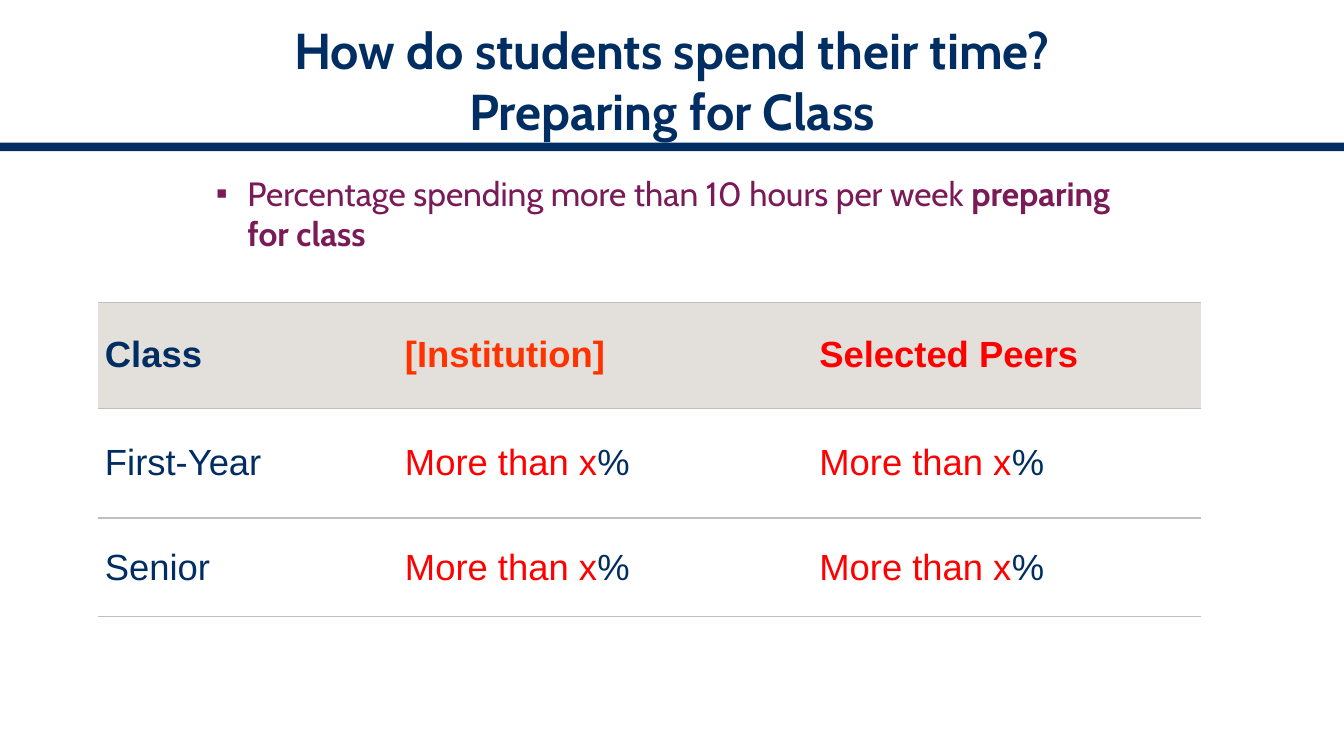
from dataclasses import dataclass

from lxml.etree import SubElement
from pptx import Presentation
from pptx.dml.color import RGBColor as Rgb
from pptx.enum.shapes import MSO_SHAPE as Shape
from pptx.enum.text import MSO_ANCHOR as Anchor, MSO_AUTO_SIZE as AutoSize, PP_ALIGN as Align
from pptx.oxml import parse_xml
from pptx.oxml.ns import nsdecls, qn
from pptx.util import Pt


@dataclass(frozen=True)
class Theme:
    navy: str = "002D62"
    plum: str = "7A1A57"
    orange: str = "FF3300"
    red: str = "FF0000"
    header_fill: str = "E3DFDA"
    rule: str = "BFBFBF"
    heading_font: str = "Cabin"
    table_font: str = "Arial"
    title_size: int = 36
    body_size: int = 24
    table_size: int = 26


THEME = Theme()
NO_TABLE_STYLE = "{2D5ABB26-0587-4C30-8999-92F81FD0307C}"


class SlideBuilder:
    def __init__(self, page, theme):
        self.page = page
        self.theme = theme

    def style(self, span, font, size, color, bold=False):
        span.font.name = font
        span.font.size = Pt(size)
        span.font.bold = bold
        span.font.color.rgb = Rgb.from_string(color)

    def place(self, box, left, top, width, height):
        box.left, box.top, box.width, box.height = map(Pt, (left, top, width, height))
        box.text_frame.word_wrap = True
        box.text_frame.auto_size = AutoSize.NONE

    def title(self, text, *bounds):
        box = self.page.shapes.title
        self.place(box, *bounds)
        box.text_frame.vertical_anchor = Anchor.MIDDLE
        box.text_frame.text = text
        para = box.text_frame.paragraphs[0]
        para.alignment = Align.CENTER
        for span in para.runs:
            self.style(span, self.theme.heading_font, self.theme.title_size, self.theme.navy, True)

    def bullet(self, parts, *bounds):
        box = self.page.placeholders[1]
        self.place(box, *bounds)
        box.text_frame.vertical_anchor = Anchor.TOP
        para = box.text_frame.paragraphs[0]
        para.level = 1
        props = para._p.get_or_add_pPr()
        props.set("marL", str(Pt(31.5)))
        props.set("indent", str(Pt(-22.5)))
        color = SubElement(props, qn("a:buClr"))
        SubElement(color, qn("a:srgbClr"), val=self.theme.plum)
        SubElement(props, qn("a:buFont"), typeface="Arial")
        SubElement(props, qn("a:buChar"), char="▪")
        para.space_before = Pt(0)
        for text, bold in parts:
            span = para.add_run()
            span.text = text
            self.style(span, self.theme.heading_font, self.theme.body_size, self.theme.plum, bold)

    def bar(self, *bounds):
        box = self.page.shapes.add_shape(Shape.RECTANGLE, *map(Pt, bounds))
        box.shadow.inherit = False
        box.fill.solid()
        box.fill.fore_color.rgb = Rgb.from_string(self.theme.navy)
        box.line.fill.background()

    def borders(self, cell, sides):
        # Border lines come before the fill in the cell properties
        props = cell._tc.get_or_add_tcPr()
        for index, side in enumerate(sides):
            props.insert(index, parse_xml(
                f'<a:ln{side} {nsdecls("a")} w="{Pt(1)}"><a:solidFill>'
                f'<a:srgbClr val="{self.theme.rule}"/></a:solidFill></a:ln{side}>'))

    def cell(self, cell, parts, header, sides):
        cell.margin_left = cell.margin_right = Pt(5)
        cell.margin_top = cell.margin_bottom = Pt(3.6)
        cell.vertical_anchor = Anchor.MIDDLE
        if header:
            cell.fill.solid()
            cell.fill.fore_color.rgb = Rgb.from_string(self.theme.header_fill)
        else:
            cell.fill.background()
        self.borders(cell, sides)
        para = cell.text_frame.paragraphs[0]
        for text, color in parts:
            span = para.add_run()
            span.text = text
            self.style(span, self.theme.table_font, self.theme.table_size, color, header)

    def table(self, rows, left, top, widths, heights):
        frame = self.page.shapes.add_table(
            len(rows), len(widths), Pt(left), Pt(top), Pt(sum(widths)), Pt(sum(heights)))
        table = frame.table
        table.first_row = table.horz_banding = False
        table._tbl.tblPr.find(qn("a:tableStyleId")).text = NO_TABLE_STYLE
        for column, width in zip(table.columns, widths):
            column.width = Pt(width)
        for line, height in zip(table.rows, heights):
            line.height = Pt(height)
        # Rules above and below the header, and under the last row
        row_sides = ["TB"] + ["T"] + [""] * (len(rows) - 3) + ["B"]
        for row, (cells, sides) in enumerate(zip(rows, row_sides)):
            for column, parts in enumerate(cells):
                self.cell(table.cell(row, column), parts, row == 0, sides)


def main():
    deck = Presentation()
    deck.slide_width, deck.slide_height = Pt(960), Pt(540)
    slide = SlideBuilder(deck.slides.add_slide(deck.slide_layouts[1]), THEME)

    # Heading and the bar beneath it
    slide.bar(0, 102, 960, 6)
    slide.title("How do students spend their time?\vPreparing for Class", 32, 18, 896, 78)

    # Question being reported
    slide.bullet([("Percentage spending more than 10 hours per week ", False),
                  ("preparing for class", True)], 138, 120, 678, 96)

    # Results by class
    result = [("More than x", THEME.red), ("%", THEME.navy)]
    header = [[("Class", THEME.navy)], [("[Institution]", THEME.orange)],
              [("Selected Peers", THEME.red)]]
    results = [[[(name, THEME.navy)], result, result] for name in ("First-Year", "Senior")]
    slide.table([header] + results, 70, 216, (214.3, 296, 277.7), (75.6, 78.5, 70.5))

    deck.save("out.pptx")


if __name__ == "__main__":
    main()
